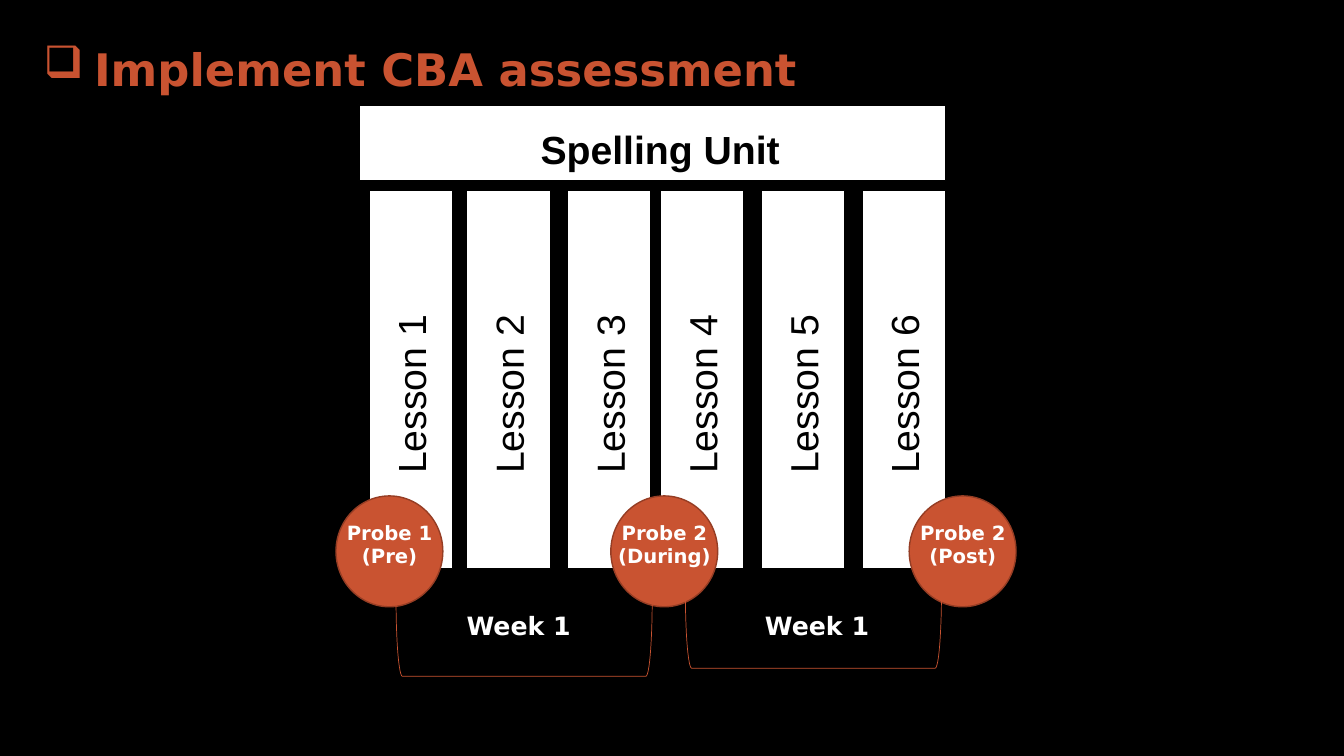
from lxml.etree import SubElement as Sub
from pptx import Presentation
from pptx.dml.color import RGBColor
from pptx.enum.shapes import MSO_SHAPE as Kind
from pptx.enum.text import MSO_ANCHOR as Anchor, MSO_AUTO_SIZE as Fit, PP_ALIGN as Align
from pptx.oxml.ns import qn
from pptx.util import Inches, Pt


def color(text):
    """Turn a hex string into a colour."""
    return RGBColor.from_string(text)


class Deck:
    """Hold the style and the current slide, laid on 40 columns and 30 rows."""

    sans, arial = "DejaVu Sans", "Arial"
    rust, edge, white, black = "C95331", "953D24", "FFFFFF", "000000"

    def __init__(self):
        """Open a wide deck with one black slide."""
        self.deck = Presentation()
        self.deck.slide_width, self.deck.slide_height = Inches(13.33), Inches(7.5)
        self.slide = self.deck.slides.add_slide(self.deck.slide_layouts[5])
        fill = self.slide.background.fill
        fill.solid()
        fill.fore_color.rgb = color(self.black)

    def area(self, x, y, wide, high):
        """Turn columns and rows into slide lengths."""
        col, row = self.deck.slide_width / 40, self.deck.slide_height / 30
        return [round(n) for n in (x * col, y * row, wide * col, high * row)]

    def style(self, frame, size, font, ink, bold, align):
        """Format every run of a text frame."""
        for para in frame.paragraphs:
            para.alignment = align
            for run in para.runs:
                face = run.font
                face.size, face.name, face.bold = Pt(size), font, bold
                face.color.rgb = color(ink)

    def title(self, text, *grid):
        """Fill the title placeholder and give it a box bullet."""
        box = self.slide.shapes.title
        box.left, box.top, box.width, box.height = self.area(*grid)
        frame = box.text_frame
        frame.text = text
        frame.auto_size, frame.vertical_anchor = Fit.NONE, Anchor.MIDDLE
        para = frame.paragraphs[0]
        props = para._p.get_or_add_pPr()
        props.set("marL", str(Inches(0.5)))
        props.set("indent", str(-Inches(0.5)))
        Sub(props, qn("a:buChar"), char="❑")
        para.line_spacing = 1.1
        self.style(frame, 32, self.sans, self.rust, True, Align.LEFT)

    def shape(self, kind, grid, fill, line, width=1, turn=0):
        """Draw a preset shape, unfilled when fill is None."""
        item = self.slide.shapes.add_shape(kind, *self.area(*grid))
        item.shadow.inherit = False
        item.rotation = turn
        if fill:
            item.fill.solid()
            item.fill.fore_color.rgb = color(fill)
        else:
            item.fill.background()
        item.line.color.rgb = color(line)
        item.line.width = Pt(width)

    def text(self, text, grid, size, font=sans, ink=white, bold=True,
             align=Align.CENTER, anchor=Anchor.TOP, turn=0):
        """Place a wrapped text box."""
        box = self.slide.shapes.add_textbox(*self.area(*grid))
        box.rotation = turn
        frame = box.text_frame
        frame.word_wrap, frame.vertical_anchor = True, anchor
        frame.text = text
        self.style(frame, size, font, ink, bold, align)

    def bar(self, *grid):
        """Draw a white bar."""
        self.shape(Kind.RECTANGLE, grid, self.white, self.black)

    def lesson(self, num, x):
        """Draw a lesson column with its upright label."""
        self.bar(x, 7.56, 2.49, 15)
        self.text(f"Lesson {num}", (x - 4.5, 10.4, 11.49, 2.28), 28, self.arial,
                  self.black, False, Align.LEFT, turn=270)

    def probe(self, label, x):
        """Draw a probe circle with its label."""
        self.shape(Kind.OVAL, (x, 19.68, 3.18, 4.4), self.rust, self.edge)
        self.text(label, (x - 0.22, 19.48, 3.63, 3.24), 14, anchor=Anchor.BOTTOM)

    def week(self, label, x, brace, y):
        """Draw a week label with the bracket beneath it."""
        self.shape(Kind.LEFT_BRACKET, (brace, y, 2.28, 10.16), None,
                   self.rust, 0.5, 270)
        self.text(label, (x, 24.04, 5.01, 1.6), 18)


def main():
    """Build the slide and save it."""
    page = Deck()
    page.title("Implement CBA assessment", 1, 1, 38, 3.2)
    page.bar(10.68, 4.16, 17.46, 3)
    page.text("Spelling Unit", (9.9, 4.76, 19.5, 2.28), 28, page.arial, page.black)
    for num, x in enumerate((10.98, 13.89, 16.89, 19.65, 22.65, 25.65), 1):
        page.lesson(num, x)
    probes = ("Probe 1\n(Pre)", 10), ("Probe 2\n(During)", 18.18), ("Probe 2\n(Post)", 27.06)
    for label, x in probes:
        page.probe(label, x)
    page.week("Week 1", 12.93, 14.46, 20.24)
    page.week("Week 1", 21.81, 23.07, 19.92)
    page.deck.save("out.pptx")


if __name__ == "__main__":
    main()
